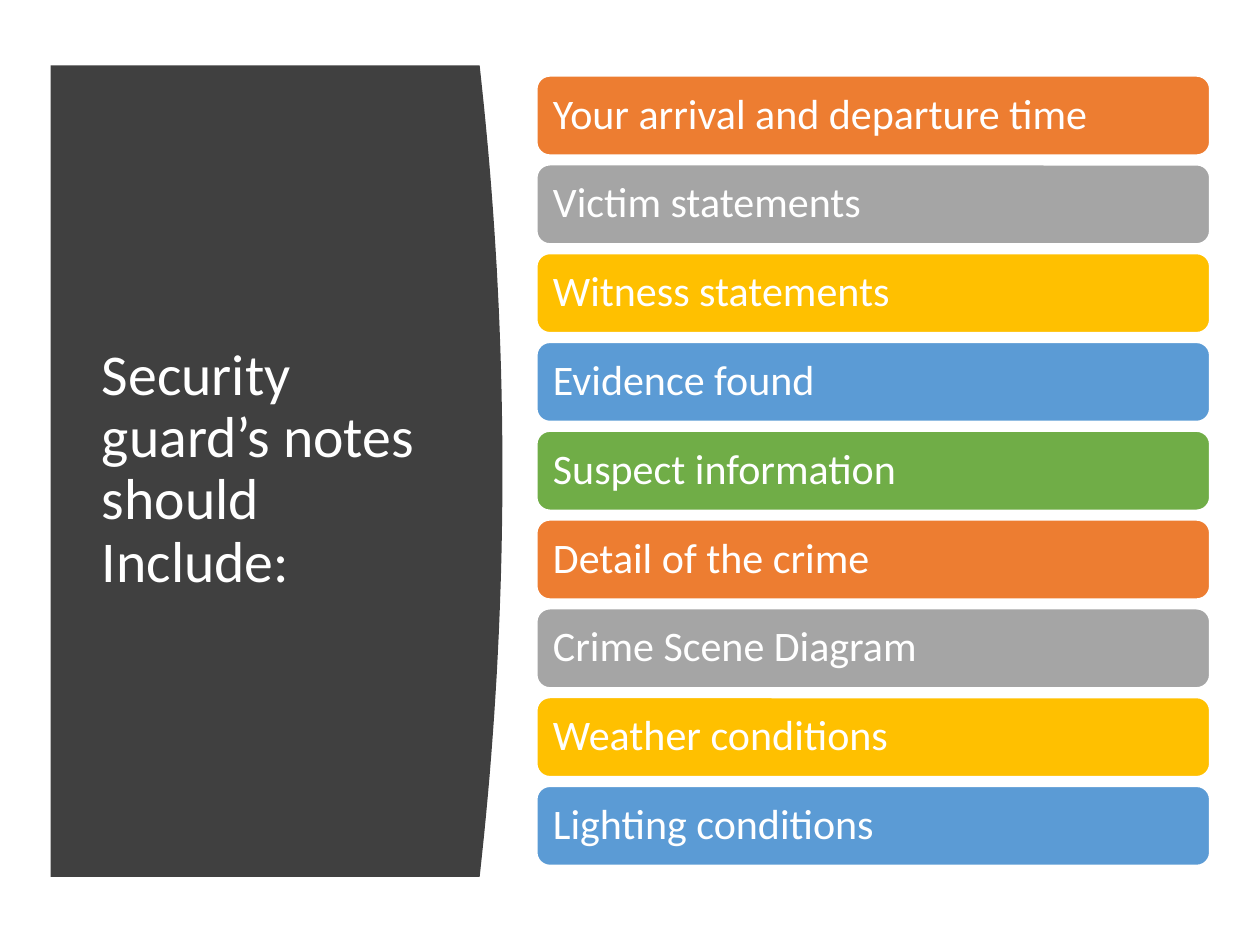
from dataclasses import dataclass

from pptx import Presentation
from pptx.dml.color import RGBColor
from pptx.enum.shapes import MSO_SHAPE
from pptx.enum.text import MSO_ANCHOR, MSO_AUTO_SIZE, PP_ALIGN
from pptx.util import Cm, Pt

ROUND = MSO_SHAPE.ROUNDED_RECTANGLE
MIDDLE = MSO_ANCHOR.MIDDLE
NO_FIT = MSO_AUTO_SIZE.NONE
LEFT = PP_ALIGN.LEFT


@dataclass(frozen=True)
class Theme:
    font: str = "Calibri"
    white: str = "FFFFFF"
    panel: str = "404040"
    bars: tuple = ("ED7D31", "A5A5A5", "FFC000", "5B9BD5", "70AD47")
    title: int = 33
    label: int = 24


theme = Theme()


def write(shape, text, size):
    frame = shape.text_frame
    frame.word_wrap = True
    frame.auto_size = NO_FIT
    frame.vertical_anchor = MIDDLE
    para = frame.paragraphs[0]
    para.alignment = LEFT
    para.line_spacing = 0.9
    run = para.add_run()
    run.text = text
    run.font.name = theme.font
    run.font.size = Pt(size)
    run.font.color.rgb = RGBColor.from_string(theme.white)


def paint(shape, color):
    shape.shadow.inherit = False
    shape.fill.solid()
    shape.fill.fore_color.rgb = RGBColor.from_string(color)


deck = Presentation()
deck.slide_width, deck.slide_height = Cm(25.4), Cm(19.05)
slide = deck.slides.add_slide(deck.slide_layouts[5])

title = slide.shapes.title
title.left, title.top = Cm(1.8), Cm(2.82)
title.width, title.height = Cm(7.11), Cm(13.31)
write(title, "Security guard’s notes should Include:", theme.title)

left, top, high = 1.02, 1.32, 16.36
edge, bulge, steps = 9.67, 0.46, 40
curve = []
for step in range(steps + 1):
    part = step / steps
    x = edge + bulge * 4 * part * (1 - part)
    curve.append((Cm(x), Cm(top + high * part)))
pen = slide.shapes.build_freeform(Cm(left), Cm(top))
pen.add_line_segments(curve + [(Cm(left), Cm(top + high))], close=True)
panel = pen.convert_to_shape()
paint(panel, theme.panel)
panel.line.fill.background()
title.element.addprevious(panel.element)

labels = [
    "Your arrival and departure time",
    "Victim statements",
    "Witness statements",
    "Evidence found",
    "Suspect information",
    "Detail of the crime",
    "Crime Scene Diagram",
    "Weather conditions",
    "Lighting conditions",
]
first, pitch = 1.53, 1.79
for row, label in enumerate(labels):
    bar = slide.shapes.add_shape(
        ROUND, Cm(10.82), Cm(first + row * pitch), Cm(13.57), Cm(1.6)
    )
    paint(bar, theme.bars[row % len(theme.bars)])
    bar.line.color.rgb = RGBColor.from_string(theme.white)
    bar.line.width = Pt(1)
    frame = bar.text_frame
    frame.margin_left = frame.margin_right = Cm(0.25)
    frame.margin_top = frame.margin_bottom = Cm(0.25)
    write(bar, label, theme.label)

deck.save("out.pptx")
